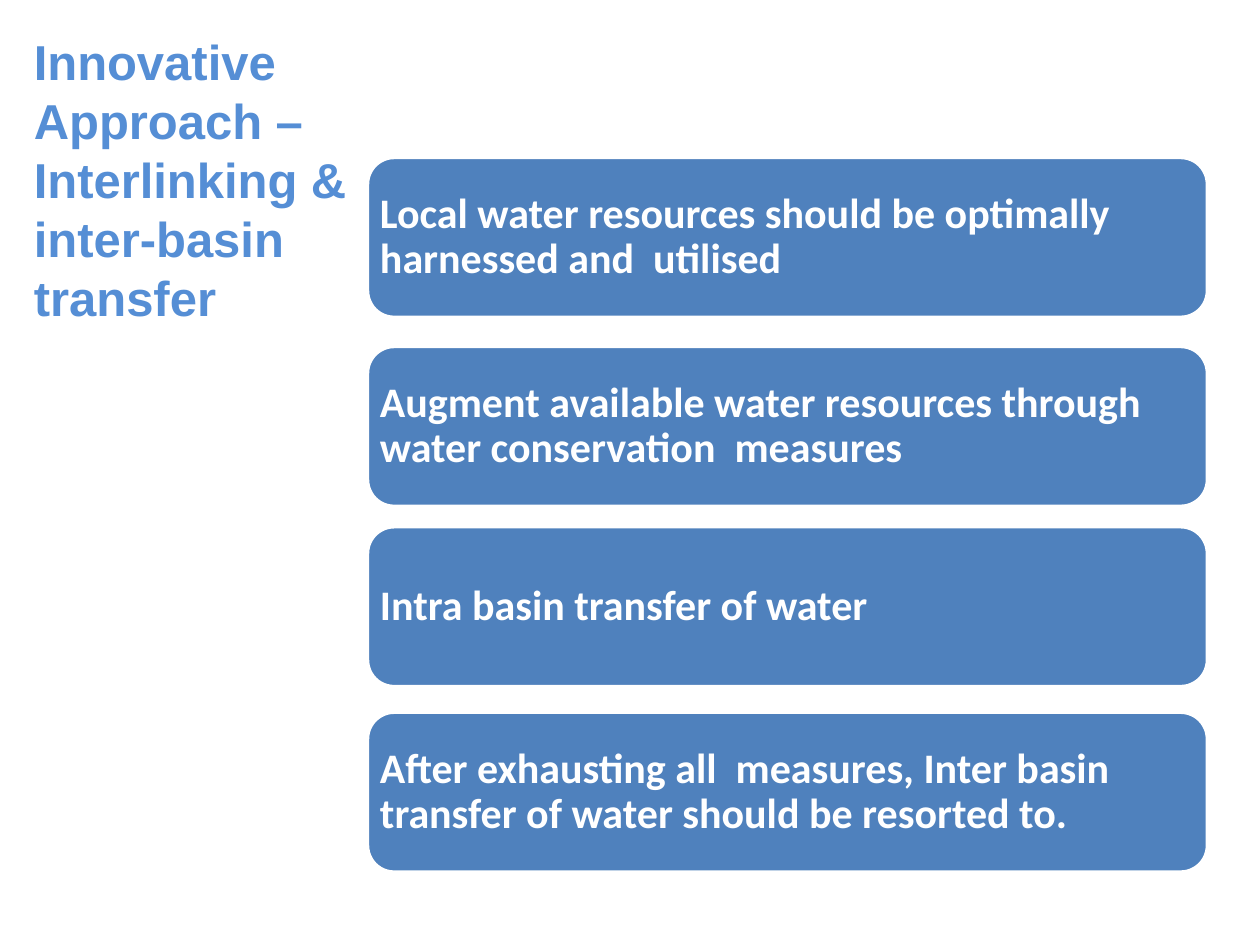
import pptx
import pptx.dml.color
import pptx.enum.shapes
import pptx.enum.text
import pptx.util

Pt = pptx.util.Pt

STEPS = [
    (90, "Local water resources should be optimally harnessed and  utilised"),
    (198, "Augment available water resources through water conservation  measures"),
    (301, "Intra basin transfer of water"),
    (407, "After exhausting all  measures, Inter basin transfer of water should be resorted to."),
]


def color(hex_string):
    return pptx.dml.color.RGBColor.from_string(hex_string)


def write_text(shape, text, font, size, fill, margin_x, margin_y, spacing=1.0):
    frame = shape.text_frame
    frame.word_wrap = True
    frame.vertical_anchor = pptx.enum.text.MSO_ANCHOR.MIDDLE
    frame.margin_left = frame.margin_right = Pt(margin_x)
    frame.margin_top = frame.margin_bottom = Pt(margin_y)
    para = frame.paragraphs[0]
    para.text = text
    para.alignment = pptx.enum.text.PP_ALIGN.LEFT
    para.line_spacing = spacing
    for span in para.runs:
        span.font.name = font
        span.font.size = Pt(size)
        span.font.bold = True
        span.font.color.rgb = color(fill)


def add_title(page, text):
    box = page.shapes.add_textbox(Pt(12.24), Pt(66.24), Pt(198), Pt(72))
    write_text(box, text, font="Arial", size=28, fill="558ED5",
               margin_x=7.2, margin_y=3.6)


def add_step(page, top, text):
    box = page.shapes.add_shape(
        pptx.enum.shapes.MSO_SHAPE.ROUNDED_RECTANGLE,
        Pt(210), Pt(top), Pt(480), Pt(91.4))
    box.shadow.inherit = False
    box.fill.solid()
    box.fill.fore_color.rgb = color("4F81BD")
    box.line.color.rgb = color("FFFFFF")
    box.line.width = Pt(2)
    write_text(box, text, font="Calibri", size=24, fill="FFFFFF",
               margin_x=2.7, margin_y=2.7, spacing=0.9)


def main():
    deck = pptx.Presentation()
    deck.slide_width, deck.slide_height = Pt(720), Pt(540)
    page = deck.slides.add_slide(deck.slide_layouts[6])
    add_title(page, "Innovative Approach –\vInterlinking & inter-basin transfer")
    for top, text in STEPS:
        add_step(page, top, text)
    deck.save("out.pptx")


if __name__ == "__main__":
    main()
